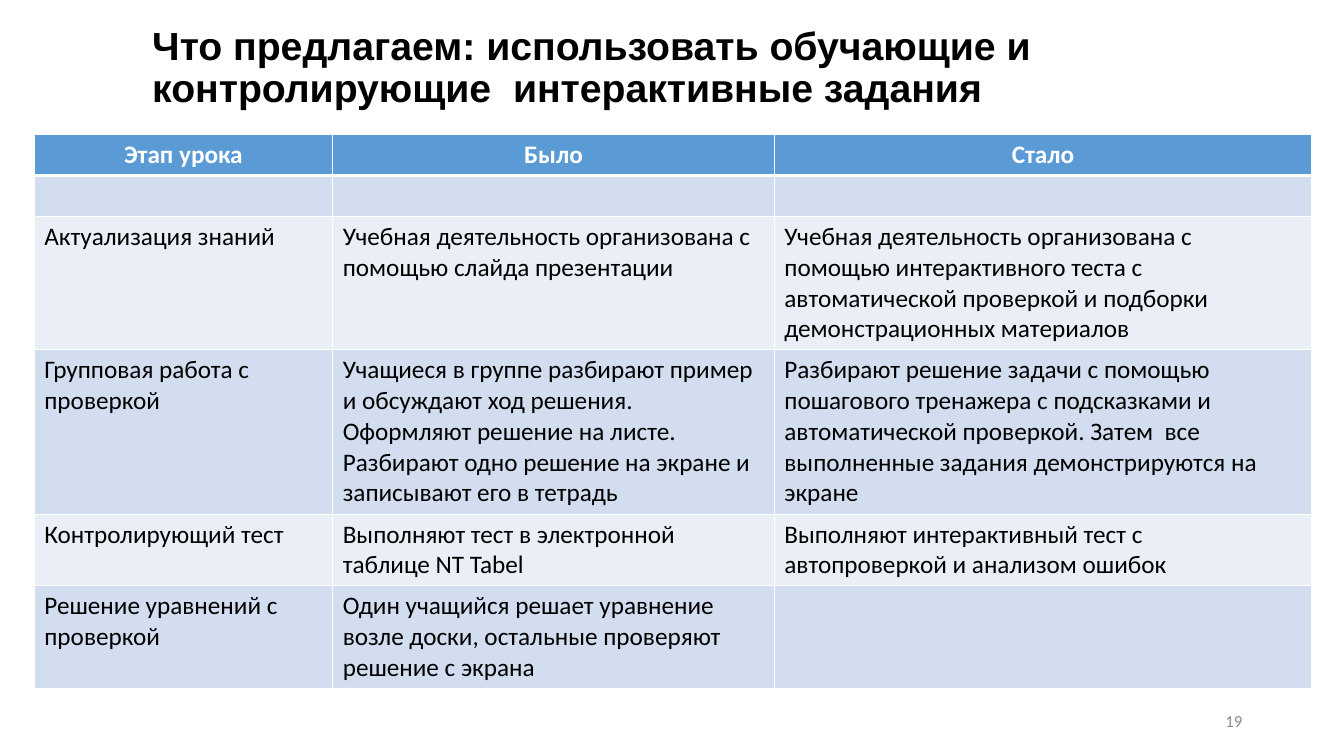
from dataclasses import dataclass

from lxml import etree
from pptx import Presentation
from pptx.dml.color import RGBColor
from pptx.enum.text import MSO_ANCHOR, MSO_AUTO_SIZE, PP_ALIGN
from pptx.oxml.ns import qn
from pptx.util import Emu, Pt

LEFT, CENTER, RIGHT = PP_ALIGN.LEFT, PP_ALIGN.CENTER, PP_ALIGN.RIGHT
MIDDLE = MSO_ANCHOR.MIDDLE
NO_AUTOFIT = MSO_AUTO_SIZE.NONE

PX = 9144
TITLE_ONLY = 5

BLACK = RGBColor(0x00, 0x00, 0x00)
WHITE = RGBColor(0xFF, 0xFF, 0xFF)
GRAY = RGBColor(0x8C, 0x8C, 0x8C)
HEADER_BLUE = RGBColor(0x5B, 0x9B, 0xD5)
BANDS = (RGBColor(0xEA, 0xEF, 0xF7), RGBColor(0xD2, 0xDE, 0xEF))

THIN_BORDER, HEADER_BORDER = Pt(1), Pt(3)
COLUMN_WIDTHS = (296, 438, 533)


@dataclass(frozen=True)
class TextStyle:
    font: str
    size: int
    color: RGBColor
    bold: bool = False
    alignment: PP_ALIGN = LEFT


@dataclass(frozen=True)
class LessonRow:
    height: int
    stage: str = ""
    before: str = ""
    after: str = ""


TITLE_STYLE = TextStyle("Arial", 28, BLACK, bold=True)
HEADER_STYLE = TextStyle("Calibri", 18, WHITE, bold=True, alignment=CENTER)
BODY_STYLE = TextStyle("Calibri", 18, BLACK)
NUMBER_STYLE = TextStyle("Calibri", 12, GRAY, alignment=RIGHT)

TITLE = "Что предлагаем: использовать обучающие и контролирующие  интерактивные задания"

ROWS = (
    LessonRow(41, "Этап урока", "Было", "Стало"),
    LessonRow(41),
    LessonRow(
        132,
        "Актуализация знаний",
        "Учебная деятельность организована с помощью слайда презентации",
        "Учебная деятельность организована с помощью интерактивного теста с "
        "автоматической проверкой и подборки демонстрационных материалов",
    ),
    LessonRow(
        163,
        "Групповая работа с проверкой",
        "Учащиеся в группе разбирают пример и обсуждают ход решения. "
        "Оформляют решение на листе.\n"
        "Разбирают одно решение на экране и записывают его в тетрадь",
        "Разбирают решение задачи с помощью пошагового тренажера с подсказками и "
        "автоматической проверкой. Затем  все выполненные задания "
        "демонстрируются на экране",
    ),
    LessonRow(
        71,
        "Контролирующий тест",
        "Выполняют тест в электронной таблице NT Tabel",
        "Выполняют интерактивный тест с автопроверкой и анализом ошибок",
    ),
    LessonRow(
        101,
        "Решение уравнений с проверкой",
        "Один учащийся решает уравнение возле доски, остальные проверяют "
        "решение с экрана",
    ),
)


def px(length: int) -> Emu:
    return Emu(length * PX)


def write_text(text_frame, text: str, style: TextStyle) -> None:
    text_frame.text = text
    for paragraph in text_frame.paragraphs:
        paragraph.alignment = style.alignment
        for run in paragraph.runs:
            run.font.name = style.font
            run.font.size = Pt(style.size)
            run.font.bold = style.bold
            run.font.color.rgb = style.color


def set_borders(cell, top: int, bottom: int) -> None:
    properties = cell._tc.get_or_add_tcPr()
    widths = {"a:lnL": THIN_BORDER, "a:lnR": THIN_BORDER, "a:lnT": top, "a:lnB": bottom}
    for position, (tag, width) in enumerate(widths.items()):
        line = etree.Element(qn(tag), w=str(int(width)))
        fill = etree.SubElement(line, qn("a:solidFill"))
        etree.SubElement(fill, qn("a:srgbClr"), val=str(WHITE))
        properties.insert(position, line)


def add_title(slide) -> None:
    title = slide.shapes.title
    title.left, title.top, title.width, title.height = map(px, (141, 17, 1101, 103))
    text_frame = title.text_frame
    write_text(text_frame, TITLE, TITLE_STYLE)
    text_frame.word_wrap = True
    text_frame.auto_size = NO_AUTOFIT
    text_frame.vertical_anchor = MIDDLE
    text_frame.paragraphs[0].line_spacing = 0.9


def add_lesson_table(slide) -> None:
    height = sum(row.height for row in ROWS)
    frame = slide.shapes.add_table(
        len(ROWS), len(COLUMN_WIDTHS), px(34), px(133), px(sum(COLUMN_WIDTHS)), px(height)
    )
    table = frame.table
    table.horz_banding = False
    for column, width in zip(table.columns, COLUMN_WIDTHS):
        column.width = px(width)
    for index, lesson in enumerate(ROWS):
        table.rows[index].height = px(lesson.height)
        is_header = index == 0
        style = HEADER_STYLE if is_header else BODY_STYLE
        top = HEADER_BORDER if index == 1 else THIN_BORDER
        bottom = HEADER_BORDER if is_header else THIN_BORDER
        for column, text in enumerate((lesson.stage, lesson.before, lesson.after)):
            cell = table.cell(index, column)
            write_text(cell.text_frame, text, style)
            cell.fill.solid()
            cell.fill.fore_color.rgb = HEADER_BLUE if is_header else BANDS[index % 2]
            set_borders(cell, top, bottom)


def add_slide_number(slide) -> None:
    box = slide.shapes.add_textbox(px(942), px(695), px(300), px(40))
    text_frame = box.text_frame
    write_text(text_frame, "19", NUMBER_STYLE)
    text_frame.word_wrap = True
    text_frame.vertical_anchor = MIDDLE


def main() -> None:
    presentation = Presentation()
    presentation.slide_width = px(1333)
    presentation.slide_height = px(750)
    slide = presentation.slides.add_slide(presentation.slide_layouts[TITLE_ONLY])
    add_title(slide)
    add_lesson_table(slide)
    add_slide_number(slide)
    presentation.save("out.pptx")


if __name__ == "__main__":
    main()
